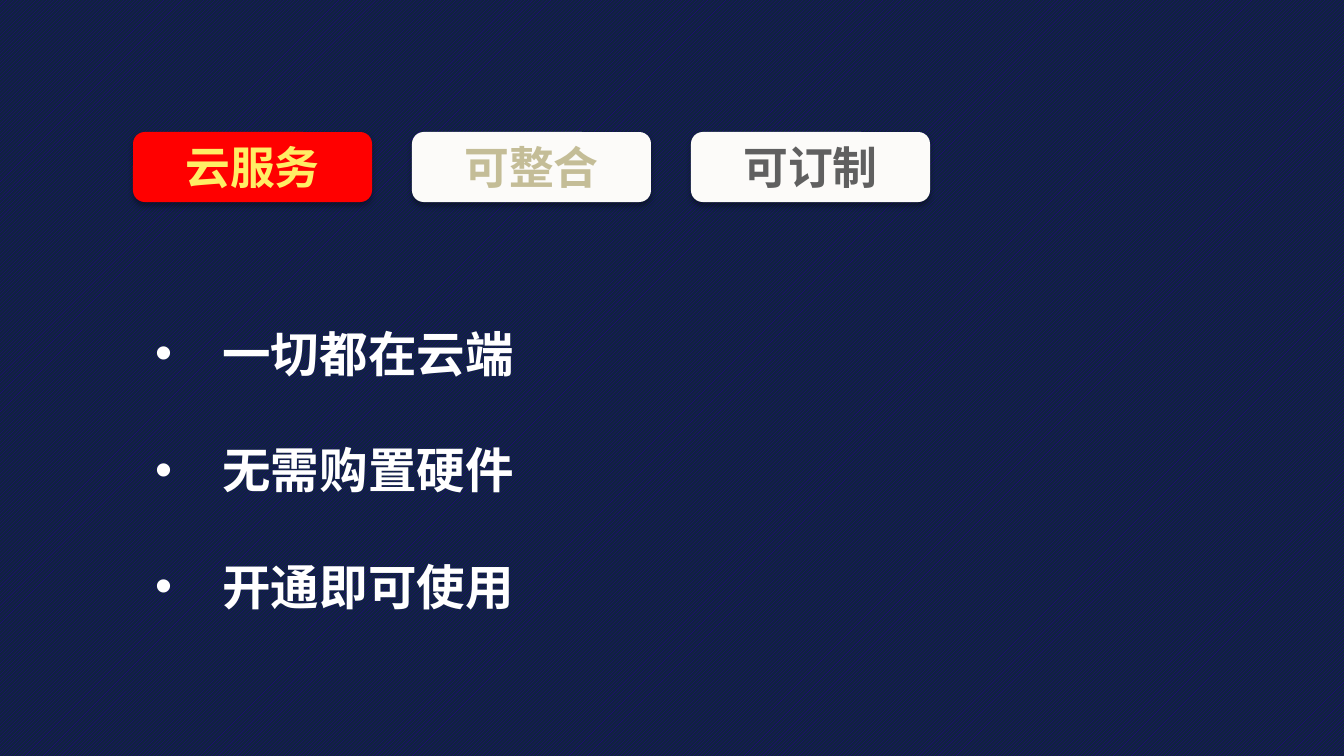
from lxml.etree import SubElement
from pptx import Presentation
from pptx.dml.color import RGBColor
from pptx.enum.dml import MSO_PATTERN
from pptx.enum.shapes import MSO_SHAPE as Shape
from pptx.enum.text import MSO_ANCHOR as Anchor, MSO_AUTO_SIZE as AutoSize, PP_ALIGN as Align
from pptx.oxml.ns import qn
from pptx.util import Emu, Pt

PX = 914400 / 134.4
FONT = "Noto Sans CJK SC"

NAVY = RGBColor(0x0F, 0x24, 0x3E)
VIOLET = RGBColor(0x29, 0x00, 0x8E)
RED = RGBColor(0xFF, 0x00, 0x00)
YELLOW = RGBColor(0xFF, 0xED, 0x65)
CREAM = RGBColor(0xFC, 0xFB, 0xF9)
SAND = RGBColor(0xC4, 0xBD, 0x97)
GRAY = RGBColor(0x60, 0x60, 0x60)
WHITE = RGBColor(0xFF, 0xFF, 0xFF)


def px(length):
    return Emu(round(length * PX))


def write(para, text, *, size, color, bold=True, align=None, spacing=None):
    """Add one formatted run to a paragraph."""
    para.alignment = align
    para.line_spacing = spacing
    span = para.add_run()
    span.text = text
    font = span.font
    font.size, font.bold, font.name = Pt(size), bold, FONT
    font.color.rgb = color
    SubElement(span._r.get_or_add_rPr(), qn("a:ea"), typeface=FONT)


class SlideBuilder:
    def __init__(self, deck):
        self.page = deck.slides.add_slide(deck.slide_layouts[6])

    def background(self, fore, back):
        fill = self.page.background.fill
        fill.patterned()
        fill.pattern = MSO_PATTERN.DARK_UPWARD_DIAGONAL
        fill.fore_color.rgb = fore
        fill.back_color.rgb = back

    def tab(self, text, left, top, width, height, fill, color):
        box = self.page.shapes.add_shape(
            Shape.ROUNDED_RECTANGLE, px(left), px(top), px(width), px(height))
        box.fill.solid()
        box.fill.fore_color.rgb = fill
        box.line.fill.background()
        self.drop_shadow(box)
        box.text_frame.vertical_anchor = Anchor.MIDDLE
        write(box.text_frame.paragraphs[0], text, size=24, color=color, align=Align.CENTER)

    def drop_shadow(self, box):
        box.shadow.inherit = False
        effects = box._element.spPr.find(qn("a:effectLst"))
        shadow = SubElement(effects, qn("a:outerShdw"), blurRad=str(Pt(3.1)),
                            dist=str(Pt(1.8)), dir="5400000", rotWithShape="0")
        black = SubElement(shadow, qn("a:srgbClr"), val="000000")
        SubElement(black, qn("a:alpha"), val="35000")

    def bullets(self, lines, left, top, width, height):
        box = self.page.shapes.add_textbox(px(left), px(top), px(width), px(height))
        frame = box.text_frame
        frame.word_wrap = False
        frame.auto_size = AutoSize.SHAPE_TO_FIT_TEXT
        for index, line in enumerate(lines):
            para = frame.add_paragraph() if index else frame.paragraphs[0]
            props = para._p.get_or_add_pPr()
            props.set("marL", "457200")
            props.set("indent", "-457200")
            SubElement(props, qn("a:buFont"), typeface="Arial")
            SubElement(props, qn("a:buChar"), char="•")
            write(para, line, size=26, color=WHITE, spacing=2.0)


def main():
    deck = Presentation()
    deck.slide_width, deck.slide_height = px(1344), px(756)
    slide = SlideBuilder(deck)
    slide.background(VIOLET, NAVY)

    # Tabs, the first one active
    tabs = [("云服务", RED, YELLOW), ("可整合", CREAM, SAND), ("可订制", CREAM, GRAY)]
    for index, (text, fill, color) in enumerate(tabs):
        slide.tab(text, 133 + 279 * index, 132, 239, 70, fill, color)

    # Benefits of the active tab
    slide.bullets(["一切都在云端", "无需购置硬件", "开通即可使用"], 142, 259, 388, 367)

    deck.save("out.pptx")


if __name__ == "__main__":
    main()
